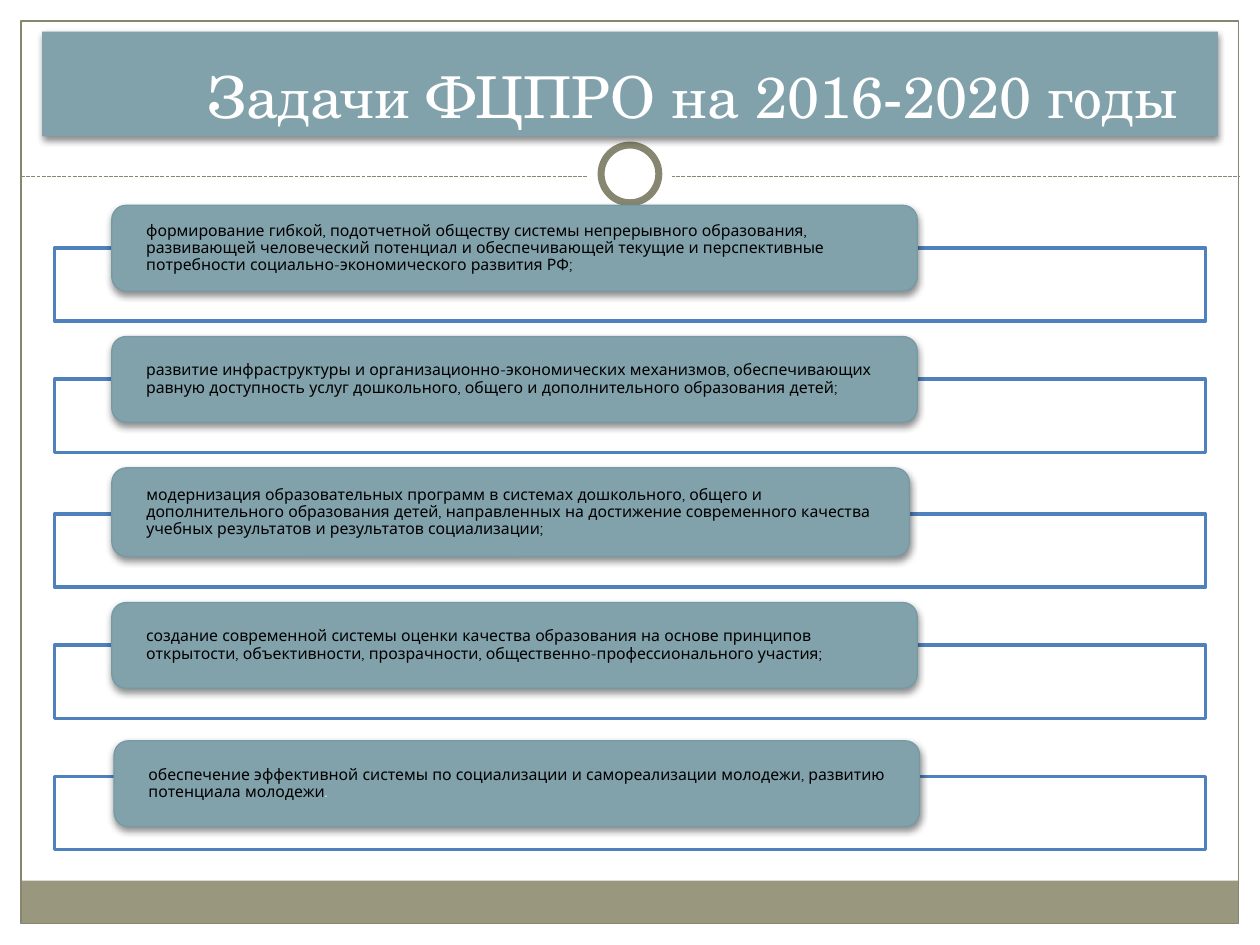
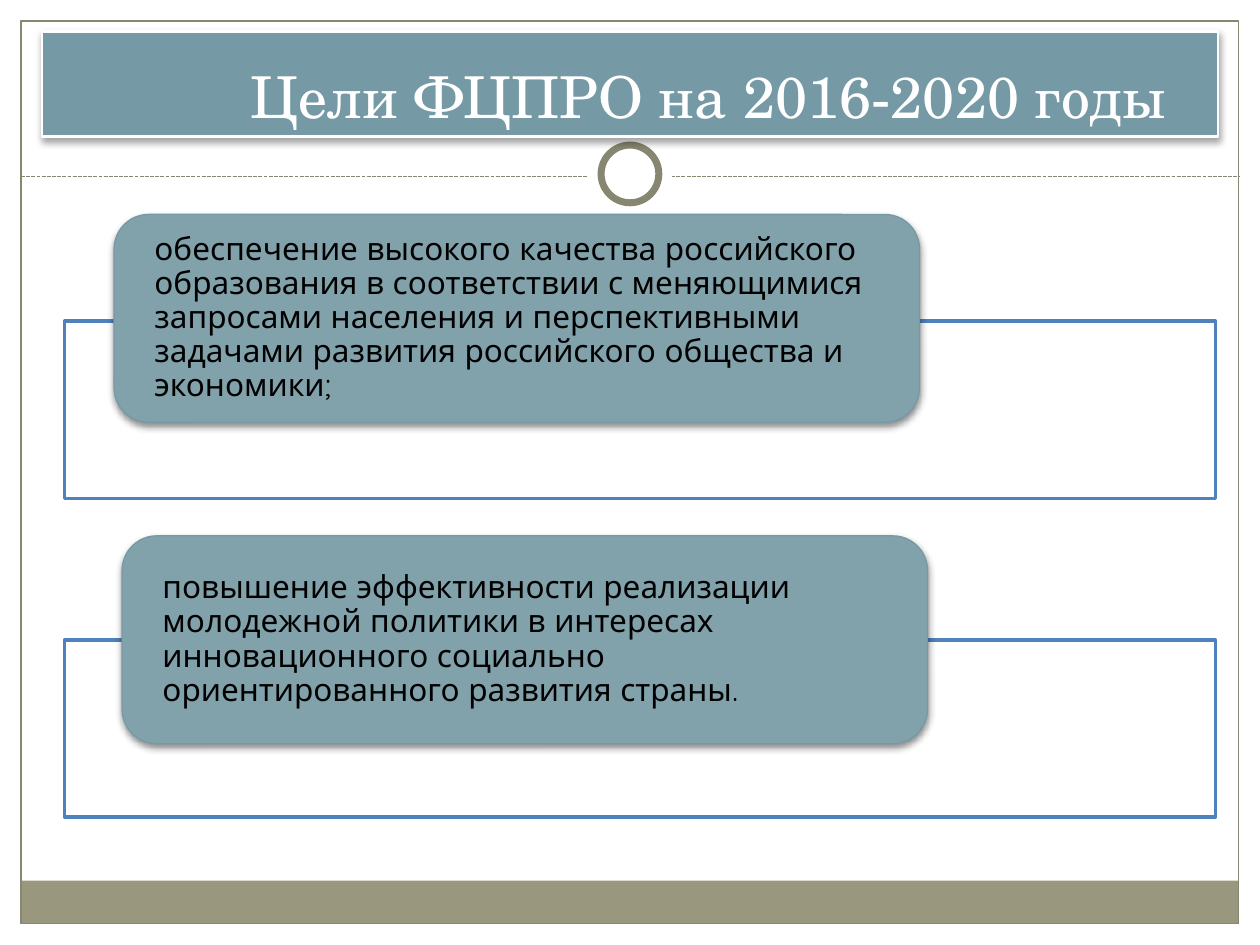
from dataclasses import dataclass

from lxml import etree
from pptx import Presentation
from pptx.dml.color import RGBColor
from pptx.enum.dml import MSO_LINE
from pptx.enum.shapes import MSO_CONNECTOR, MSO_SHAPE
from pptx.enum.text import MSO_ANCHOR, PP_ALIGN
from pptx.oxml.ns import qn
from pptx.util import Pt

RECT, ROUNDED, OVAL = MSO_SHAPE.RECTANGLE, MSO_SHAPE.ROUNDED_RECTANGLE, MSO_SHAPE.OVAL
STRAIGHT = MSO_CONNECTOR.STRAIGHT
DASHED = MSO_LINE.SQUARE_DOT
LEFT, RIGHT = PP_ALIGN.LEFT, PP_ALIGN.RIGHT
MIDDLE, BOTTOM = MSO_ANCHOR.MIDDLE, MSO_ANCHOR.BOTTOM

WIDTH, HEIGHT = 720, 540
EDGE = 12.1
DIVIDER_TOP = 100.8
WHITE, BLACK = "FFFFFF", "000000"
OLIVE, FOOTER_OLIVE = "878670", "99987F"
TEAL, DEEP_TEAL, BLUE = "81A1AB", "759AA5", "4F81BD"
TITLE_FONT, BODY_FONT = "TeX Gyre Schola", "Quicksand"
TITLE_BOX = (24, 18, 672, 60)
CARD_INSET = 17.28


@dataclass
class Card:
    runs: list
    rail_top: float
    left: float
    top: float
    width: float
    height: float


TASKS = [
    Card([("формирование гибкой, подотчетной обществу системы непрерывного образования, "
           "развивающей человеческий потенциал и обеспечивающей текущие и перспективные "
           "потребности социально-экономического развития РФ;", BLACK)],
         141.7, 63.9, 117.3, 460.3, 49),
    Card([("развитие инфраструктуры и организационно-экономических механизмов, "
           "обеспечивающих равную доступность услуг дошкольного, общего и "
           "дополнительного образования детей;", BLACK)],
         216.7, 63.9, 192.3, 460.3, 49),
    Card([("модернизация образовательных программ в системах дошкольного, общего и "
           "дополнительного образования детей, направленных на достижение современного "
           "качества учебных результатов и результатов социализации;", BLACK)],
         293.7, 63.9, 267.3, 455.8, 50.7),
    Card([("создание современной системы оценки качества образования на основе принципов "
           "открытости, объективности, прозрачности, общественно-профессионального "
           "участия;", BLACK)],
         368.7, 63.9, 344.3, 460.3, 49),
    Card([("обеспечение эффективной системы по социализации и самореализации молодежи, "
           "развитию потенциала молодежи", BLACK), (".", WHITE)],
         443.6, 65.2, 423.3, 460.3, 49),
]
GOALS = [
    Card([("обеспечение высокого качества российского образования в соответствии с "
           "меняющимися запросами населения и перспективными задачами развития "
           "российского общества и экономики;", BLACK)],
         183.6, 65.2, 122.5, 460.3, 118.8),
    Card([("повышение эффективности реализации молодежной политики в интересах "
           "инновационного социально ориентированного развития страны.", BLACK)],
         365.8, 69.8, 306.2, 460.3, 118.8),
]


def color(value):
    return RGBColor.from_string(value)


def add_alpha(parent, percent):
    etree.SubElement(parent, qn("a:alpha"), val=str(percent * 1000))


def add_shadow(shape, opacity):
    effects = shape._element.spPr.find(qn("a:effectLst"))
    shadow = etree.SubElement(effects, qn("a:outerShdw"), blurRad=str(Pt(4)),
                              dist=str(Pt(2)), dir="5400000", rotWithShape="0")
    tint = etree.SubElement(shadow, qn("a:srgbClr"), val=BLACK)
    add_alpha(tint, opacity)


def draw(slide, kind, box, fill=None, line=None, weight=0.75, shadow=None, opacity=None):
    shape = slide.shapes.add_shape(kind, *map(Pt, box))
    shape.shadow.inherit = False
    if fill:
        shape.fill.solid()
        shape.fill.fore_color.rgb = color(fill)
    else:
        shape.fill.background()
    if opacity:
        fill_tint = shape._element.spPr.find(qn("a:solidFill")).find(qn("a:srgbClr"))
        add_alpha(fill_tint, opacity)
    if line:
        shape.line.color.rgb = color(line)
        shape.line.width = Pt(weight)
    else:
        shape.line.fill.background()
    if shadow:
        add_shadow(shape, shadow)
    return shape


def write(shape, runs, size, font, align=LEFT, anchor=MIDDLE, insets=(0, 0, 0, 0), spacing=1.0):
    frame = shape.text_frame
    frame.word_wrap = True
    frame.vertical_anchor = anchor
    (frame.margin_left, frame.margin_top,
     frame.margin_right, frame.margin_bottom) = map(Pt, insets)
    paragraph = frame.paragraphs[0]
    paragraph.alignment = align
    paragraph.line_spacing = spacing
    for words, tint in runs:
        run = paragraph.add_run()
        run.text = words
        run.font.size = Pt(size)
        run.font.name = font
        run.font.color.rgb = color(tint)


def add_divider(slide, left, right, top):
    divider = slide.shapes.add_connector(STRAIGHT, Pt(left), Pt(top), Pt(right), Pt(top))
    divider.line.color.rgb = color(OLIVE)
    divider.line.width = Pt(0.75)
    divider.line.dash_style = DASHED
    etree.SubElement(divider._element.spPr, qn("a:effectLst"))


def add_ring(slide, center_x, center_y):
    for diameter, line in ((48, None), (33, OLIVE)):
        box = (center_x - diameter / 2, center_y - diameter / 2, diameter, diameter)
        draw(slide, OVAL, box, fill=WHITE, line=line, weight=4)


def add_frame(slide, width, height):
    inner_width, inner_height = width - 2 * EDGE, height - 2 * EDGE
    draw(slide, RECT, (0, 0, width, 109.4), fill=WHITE)
    for left in (0, width - EDGE):
        draw(slide, RECT, (left, 0, EDGE, height), fill=WHITE)
    draw(slide, RECT, (EDGE, 503.2, inner_width, 24.4), fill=FOOTER_OLIVE)
    draw(slide, RECT, (EDGE, EDGE, inner_width, inner_height), line=OLIVE)
    add_divider(slide, EDGE, width - EDGE, DIVIDER_TOP)
    add_ring(slide, width / 2, 99.4)


def add_title(slide, box, title, indent, **style):
    band = draw(slide, RECT, box, **style)
    write(band, [(title, WHITE)], 33, TITLE_FONT, align=RIGHT, anchor=BOTTOM,
          insets=(7.2, 3.6, indent, 3.6))


def add_cards(slide, cards, rail_left, rail_height, size):
    for card in cards:
        draw(slide, RECT, (rail_left, card.rail_top, 657.6, rail_height),
             fill=WHITE, line=BLUE, weight=2, opacity=90)
        plate = draw(slide, ROUNDED, (card.left, card.top, card.width, card.height),
                     fill=TEAL, line=DEEP_TEAL, shadow=45)
        write(plate, card.runs, size, BODY_FONT,
              insets=(CARD_INSET, 0, CARD_INSET, 0), spacing=0.9)


def add_page(deck):
    slide = deck.slides.add_slide(deck.slide_layouts[6])
    add_frame(slide, WIDTH, HEIGHT)
    return slide


def main():
    deck = Presentation()
    deck.slide_width, deck.slide_height = Pt(WIDTH), Pt(HEIGHT)

    tasks = add_page(deck)
    add_title(tasks, TITLE_BOX, "Задачи ФЦПРО на 2016-2020 годы", 22.5,
              fill=TEAL, shadow=45)
    add_cards(tasks, TASKS, rail_left=31.2, rail_height=41.8, size=9)

    goals = add_page(deck)
    add_title(goals, TITLE_BOX, "Цели ФЦПРО на 2016-2020 годы", 29.5,
              fill=DEEP_TEAL, line=WHITE, weight=1.57, shadow=35)
    add_cards(goals, GOALS, rail_left=36.9, rail_height=101.2, size=18)

    deck.save("out.pptx")


if __name__ == "__main__":
    main()
